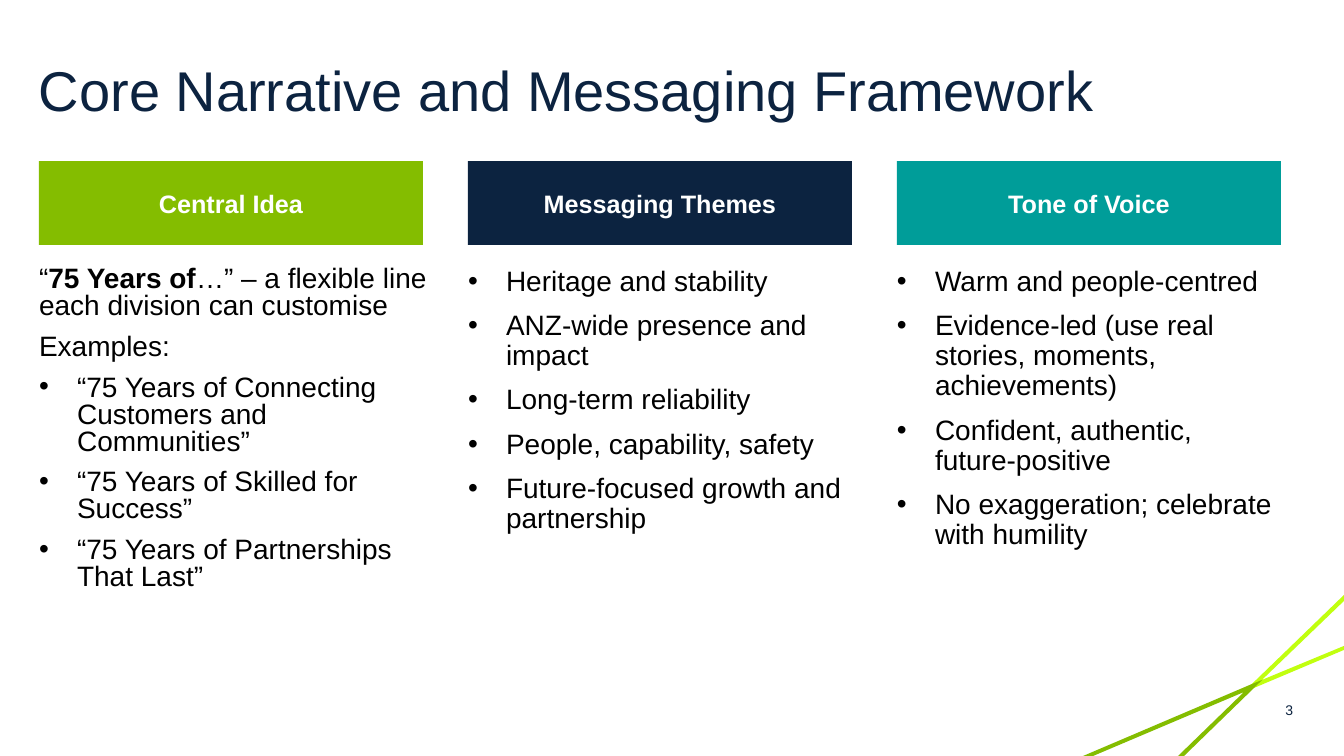
from lxml.etree import SubElement
from pptx import Presentation
from pptx.dml.color import RGBColor
from pptx.enum.shapes import MSO_SHAPE
from pptx.enum.text import MSO_ANCHOR, PP_ALIGN
from pptx.oxml.ns import qn
from pptx.util import Pt

PX = 914400 / 100.8
FONT = "Arial"
COLORS = {
    "navy": "0C2340",
    "green": "84BD00",
    "lime": "C1FF0F",
    "teal": "009D99",
    "white": "FFFFFF",
    "black": "000000",
}
LEFT, STEP = 39, 429
INDENT = 38

# Title, colour, line spacing, plain lines, bulleted lines
COLUMNS = [
    ("Central Idea", "green", 0.8,
     ["“**75 Years of**…” – a flexible line each division can customise",
      "Examples:"],
     ["“75 Years of Connecting Customers and Communities”",
      "“75 Years of Skilled for Success”",
      "“75 Years of Partnerships That Last”"]),
    ("Messaging Themes", "navy", 0.9, [],
     ["Heritage and stability",
      "ANZ-wide presence and impact",
      "Long‑term reliability",
      "People, capability, safety",
      "Future‑focused growth and partnership"]),
    ("Tone of Voice", "teal", 0.9, [],
     ["Warm and people‑centred",
      "Evidence-led (use real stories, moments, achievements)",
      "Confident, authentic, future‑positive",
      "No exaggeration; celebrate with humility"]),
]

UPPER = [(1344, 595), (1252, 684), (1244, 692), (1254, 688), (1344, 650),
         (1344, 646), (1262, 680), (1344, 601)]
LOWER = [(1252, 684), (1083, 756), (1093, 756), (1244, 692), (1178, 756),
         (1184, 756), (1254, 688), (1262, 680)]


def emu(*sizes):
    return [round(size * PX) for size in sizes]


def rgb(name):
    return RGBColor.from_string(COLORS[name])


def style(font, size, color, bold=False):
    font.name = FONT
    font.size = Pt(size)
    font.bold = bold
    font.color.rgb = rgb(color)


def paint(shape, color):
    shape.shadow.inherit = False
    shape.fill.solid()
    shape.fill.fore_color.rgb = rgb(color)
    shape.line.fill.background()


def add_box(slide, area, inset=True):
    frame = slide.shapes.add_textbox(*emu(*area)).text_frame
    frame.word_wrap = True
    if not inset:
        frame.margin_left = frame.margin_right = 0
        frame.margin_top = frame.margin_bottom = 0
    return frame


def add_label(slide, area, text, size, align, inset=True):
    frame = add_box(slide, area, inset)
    frame.vertical_anchor = MSO_ANCHOR.MIDDLE
    frame.text = text
    para = frame.paragraphs[0]
    para.alignment = align
    style(para.runs[0].font, size, "navy")
    return para


def add_head(slide, left, text, color):
    shape = slide.shapes.add_shape(
        MSO_SHAPE.RECTANGLE, *emu(left, 161, 384, 84))
    paint(shape, color)
    frame = shape.text_frame
    frame.text = text
    frame.vertical_anchor = MSO_ANCHOR.MIDDLE
    para = frame.paragraphs[0]
    para.alignment = PP_ALIGN.CENTER
    style(para.runs[0].font, 18, "white", True)


def add_bullet(para):
    props = para._p.get_or_add_pPr()
    indent = emu(INDENT)[0]
    props.set("marL", str(indent))
    props.set("indent", str(-indent))
    SubElement(props, qn("a:buFont")).set("typeface", FONT)
    SubElement(props, qn("a:buChar")).set("char", "•")


def add_body(slide, left, plain, points, spacing):
    """Fill a column; text between double asterisks becomes bold."""
    frame = add_box(slide, (left, 267, 405, 346), inset=False)
    for i, text in enumerate(plain + points):
        para = frame.add_paragraph() if i else frame.paragraphs[0]
        if i >= len(plain):
            add_bullet(para)
        para.line_spacing = spacing
        if i:
            para.space_before = Pt(10)
        for j, part in enumerate(text.split("**")):
            run = para.add_run()
            run.text = part
            style(run.font, 20, "black", j % 2 == 1)


def add_ray(slide, points, color):
    build = slide.shapes.build_freeform(*points[0], scale=PX)
    build.add_line_segments(points[1:], close=True)
    paint(build.convert_to_shape(), color)


def main():
    deck = Presentation()
    deck.slide_width, deck.slide_height = emu(1344, 756)
    slide = deck.slides.add_slide(deck.slide_layouts[6])

    add_ray(slide, UPPER, "lime")
    add_ray(slide, LOWER, "green")
    add_label(slide, (1223, 690, 80, 40), "3", 10, PP_ALIGN.RIGHT)
    title = add_label(slide, (LEFT, 40, 1262, 107),
                      "Core Narrative and Messaging Framework",
                      40, PP_ALIGN.LEFT, inset=False)
    title.line_spacing = 0.9
    for i, (head, color, spacing, plain, points) in enumerate(COLUMNS):
        left = LEFT + i * STEP
        add_head(slide, left, head, color)
        add_body(slide, left, plain, points, spacing)

    deck.save("out.pptx")


if __name__ == "__main__":
    main()
